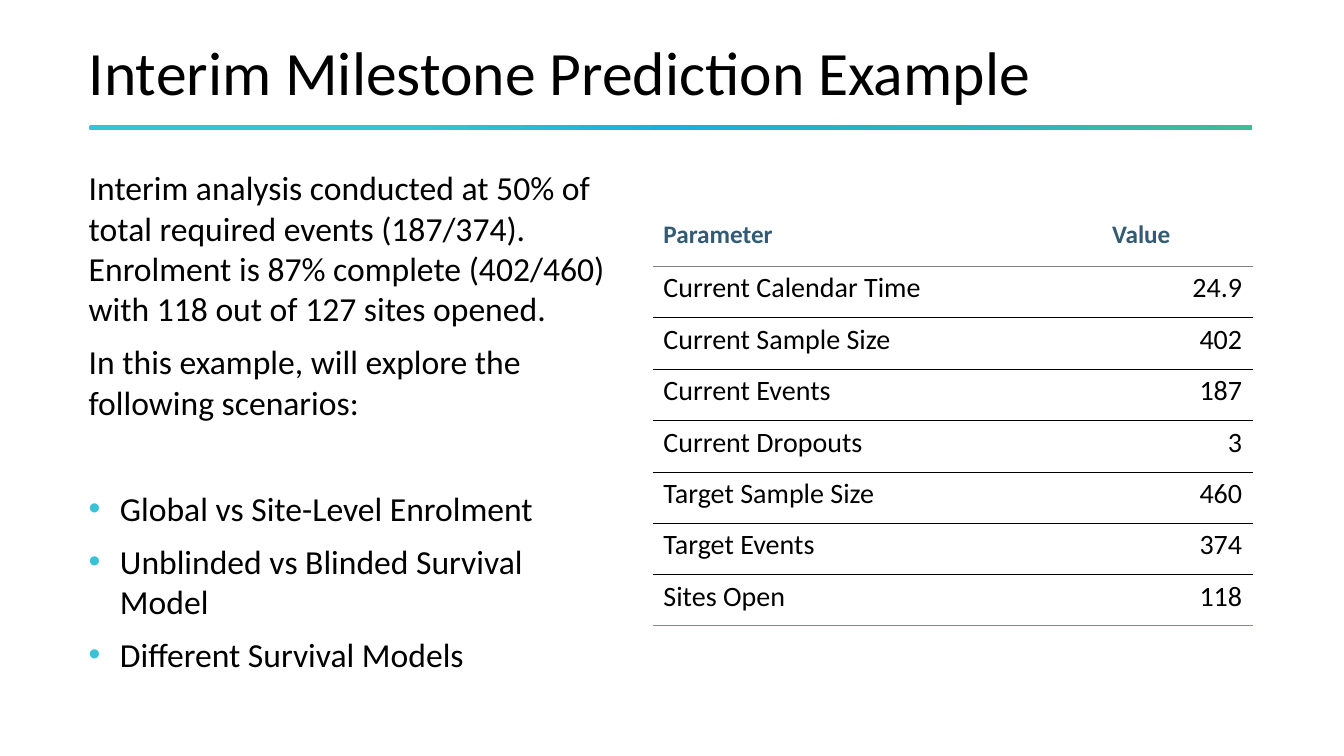
from copy import deepcopy

from pptx import Presentation
from pptx.dml.color import RGBColor
from pptx.enum.shapes import MSO_SHAPE
from pptx.enum.text import MSO_ANCHOR, PP_ALIGN
from pptx.oxml.ns import qn
from pptx.util import Inches, Pt
from lxml import etree

ROUNDED = MSO_SHAPE.ROUNDED_RECTANGLE
TOP, BOTTOM = MSO_ANCHOR.TOP, MSO_ANCHOR.BOTTOM
LEFT, RIGHT = PP_ALIGN.LEFT, PP_ALIGN.RIGHT

BLACK = RGBColor(0x00, 0x00, 0x00)
WHITE = RGBColor(0xFF, 0xFF, 0xFF)
GRAY = RGBColor(0x80, 0x80, 0x80)
TURQUOISE = RGBColor(0x37, 0xC2, 0xD6)
BLUE = RGBColor(0x1C, 0xAD, 0xE4)
GREEN = RGBColor(0x42, 0xBA, 0x97)
SLATE = RGBColor(0x33, 0x5B, 0x74)

MARGIN, CONTENT_WIDTH = 0.88, 11.54

INTRODUCTION = [
    "Interim analysis conducted at 50% of total required events (187/374). "
    "Enrolment is 87% complete (402/460) with 118 out of 127 sites opened.",
    "In this example, will explore the following scenarios:",
]
SCENARIOS = [
    "Global vs Site-Level Enrolment",
    "Unblinded vs Blinded Survival Model",
    "Different Survival Models",
]
PARAMETERS = [
    ("Parameter", "Value"),
    ("Current Calendar Time", "24.9"),
    ("Current Sample Size", "402"),
    ("Current Events", "187"),
    ("Current Dropouts", "3"),
    ("Target Sample Size", "460"),
    ("Target Events", "374"),
    ("Sites Open", "118"),
]


class SlideBuilder:
    """Draw styled elements on one slide."""

    def __init__(self, slide, font_name):
        self.slide = slide
        self.font_name = font_name

    def style(self, paragraph, size, color=BLACK, bold=False):
        font = paragraph.font
        font.name, font.size, font.bold = self.font_name, Pt(size), bold
        font.color.rgb = color

    def text_frame(self, left, top, width, height, anchor=TOP):
        box = self.slide.shapes.add_textbox(
            Inches(left), Inches(top), Inches(width), Inches(height))
        frame = box.text_frame
        frame.word_wrap = True
        frame.vertical_anchor = anchor
        frame.margin_left = frame.margin_right = 0
        frame.margin_top = frame.margin_bottom = 0
        return frame

    def title(self, text, left, top, width, height):
        frame = self.text_frame(left, top, width, height, BOTTOM)
        paragraph = frame.paragraphs[0]
        paragraph.text = text
        paragraph.line_spacing = 0.9
        self.style(paragraph, 44)

    def gradient_bar(self, left, top, width, height, stops):
        shape = self.slide.shapes.add_shape(
            ROUNDED, Inches(left), Inches(top), Inches(width), Inches(height))
        shape.adjustments[0] = 0.5
        shape.shadow.inherit = False
        shape.line.fill.background()
        shape.fill.gradient()
        shape.fill.gradient_angle = 0
        stop_list = shape._element.spPr.find(".//" + qn("a:gsLst"))
        while len(stop_list) < len(stops):
            stop_list.append(deepcopy(stop_list[-1]))
        for stop, (position, color) in zip(shape.fill.gradient_stops, stops):
            stop.position = position
            stop.color.rgb = color

    def add_bullet(self, paragraph, indent):
        properties = paragraph._p.get_or_add_pPr()
        properties.set("marL", str(Inches(indent)))
        properties.set("indent", str(-Inches(indent)))
        bullet_color = etree.SubElement(properties, qn("a:buClr"))
        etree.SubElement(bullet_color, qn("a:srgbClr"), val=str(TURQUOISE))
        etree.SubElement(properties, qn("a:buFont"), typeface="Arial")
        etree.SubElement(properties, qn("a:buChar"), char="•")

    def body(self, introduction, bullets, left, top, width, height):
        frame = self.text_frame(left, top, width, height)
        for index, text in enumerate(introduction + bullets):
            paragraph = frame.paragraphs[0] if index == 0 else frame.add_paragraph()
            paragraph.text = text
            paragraph.space_before = Pt(6 if index else 0)
            paragraph.space_after = Pt(3)
            if index == len(introduction):
                paragraph.space_before = Pt(44)
            if index >= len(introduction):
                self.add_bullet(paragraph, 0.31)
            self.style(paragraph, 24)

    def cell_borders(self, cell, top, bottom):
        properties = cell._tc.get_or_add_tcPr()
        sides = {"L": (WHITE, 1), "R": (WHITE, 1), "T": top, "B": bottom}
        for side, (color, points) in sides.items():
            line = etree.SubElement(
                properties, qn(f"a:ln{side}"), w=str(Pt(points)))
            fill = etree.SubElement(line, qn("a:solidFill"))
            etree.SubElement(fill, qn("a:srgbClr"), val=str(color))

    def table(self, rows, left, top, column_widths, row_height):
        frame = self.slide.shapes.add_table(
            len(rows), len(column_widths), Inches(left), Inches(top),
            Inches(sum(column_widths)), Inches(row_height * len(rows)))
        table = frame.table
        table.first_row = table.horz_banding = False
        for column, width in zip(table.columns, column_widths):
            column.width = Inches(width)
        inner_rules = [(BLACK, 0.25)] * (len(rows) - 2)
        rules = [(WHITE, 1), (GRAY, 0.5), *inner_rules, (BLUE, 1)]
        for row_index, row in enumerate(rows):
            table.rows[row_index].height = Inches(row_height)
            for column_index, text in enumerate(row):
                cell = table.cell(row_index, column_index)
                self.cell_borders(cell, rules[row_index], rules[row_index + 1])
                cell.fill.solid()
                cell.fill.fore_color.rgb = WHITE
                paragraph = cell.text_frame.paragraphs[0]
                paragraph.text = text
                paragraph.alignment = RIGHT if row_index and column_index else LEFT
                if row_index == 0:
                    self.style(paragraph, 18, SLATE, bold=True)
                else:
                    self.style(paragraph, 20)


def main():
    presentation = Presentation()
    presentation.slide_width = Inches(13.33)
    presentation.slide_height = Inches(7.5)
    slide = presentation.slides.add_slide(presentation.slide_layouts[6])
    builder = SlideBuilder(slide, "Calibri")
    builder.gradient_bar(MARGIN, 1.24, CONTENT_WIDTH, 0.05,
                         [(0.28, TURQUOISE), (0.5, BLUE), (1, GREEN)])
    builder.title("Interim Milestone Prediction Example",
                  MARGIN, 0.24, CONTENT_WIDTH, 0.84)
    builder.body(INTRODUCTION, SCENARIOS, MARGIN, 1.66, 5.12, 5.42)
    builder.table(PARAMETERS, 6.48, 2.13, [4.45, 1.49], 0.51)
    presentation.save("out.pptx")


if __name__ == "__main__":
    main()
